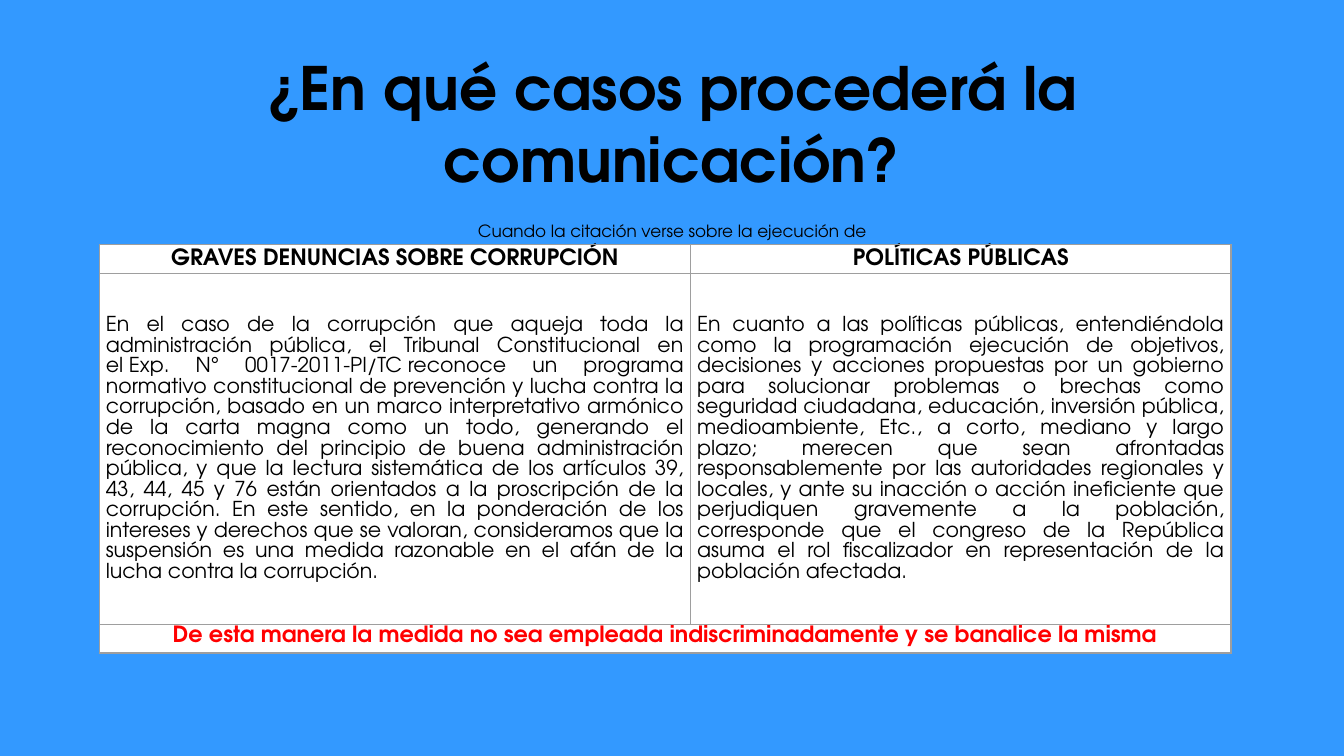
from dataclasses import dataclass

import pptx
import pptx.dml.color
import pptx.enum.text
import pptx.oxml
import pptx.oxml.ns
import pptx.util
from pptx.util import Inches

ALIGN = pptx.enum.text.PP_ALIGN
ANCHOR = pptx.enum.text.MSO_ANCHOR
FONT = "TeX Gyre Adventor"
HARD_SPACE = chr(160)
COLORS = {
    "background": "3399FF",
    "text": "000000",
    "warning": "FF0000",
    "cell": "FFFFFF",
    "border": "9E9E9E",
}


@dataclass
class Style:
    size: float
    bold: bool = False
    color: str = "text"
    align: ALIGN = ALIGN.CENTER
    line_spacing: float | None = None
    gap: float | None = None
    anchor: ANCHOR = ANCHOR.MIDDLE


@dataclass
class Entry:
    row: int
    column: int
    text: str
    style: Style


TITLE = Style(32, bold=True)
SUBTITLE = Style(9, line_spacing=1.5, gap=12, anchor=ANCHOR.TOP)
HEADING = Style(12, bold=True, line_spacing=1.07, gap=12)
BODY = Style(11, align=ALIGN.JUSTIFY, line_spacing=1.07, gap=12)
WARNING = Style(12, bold=True, color="warning", line_spacing=1.07, gap=12, anchor=ANCHOR.TOP)

COLUMN_WIDTHS = [4.4, 4.02]
ROW_HEIGHTS = [0.21, 2.61, 0.21]
ENTRIES = [
    Entry(0, 0, "GRAVES DENUNCIAS SOBRE CORRUPCIÓN", HEADING),
    Entry(0, 1, "POLÍTICAS PÚBLICAS", HEADING),
    Entry(
        1, 0,
        "En el caso de la corrupción que aqueja toda la administración pública, "
        f"el Tribunal Constitucional en el{HARD_SPACE}Exp. N° 0017-2011-PI/TC{HARD_SPACE}"
        "reconoce un programa "
        "normativo constitucional de prevención y lucha contra la corrupción, basado en "
        "un marco interpretativo armónico de la carta magna como un todo, generando el "
        "reconocimiento del principio de buena administración pública, y que la lectura "
        "sistemática de los artículos 39, 43, 44, 45 y 76 están orientados a la "
        "proscripción de la corrupción. En este sentido, en la ponderación de los "
        "intereses y derechos que se valoran, consideramos que la suspensión es una "
        "medida razonable en el afán de la lucha contra la corrupción.",
        BODY,
    ),
    Entry(
        1, 1,
        "En cuanto a las políticas públicas, entendiéndola como la programación "
        "ejecución de objetivos, decisiones y acciones propuestas por un gobierno para "
        "solucionar problemas o brechas como seguridad ciudadana, educación, inversión "
        "pública, medioambiente, Etc., a corto, mediano y largo plazo; merecen que sean "
        "afrontadas responsablemente por las autoridades regionales y locales, y ante su "
        "inacción o acción ineficiente que perjudiquen gravemente a la población, "
        "corresponde que el congreso de la República asuma el rol fiscalizador en "
        "representación de la población afectada.",
        BODY,
    ),
    Entry(
        2, 0,
        "De esta manera la medida no sea empleada indiscriminadamente y se banalice la misma",
        WARNING,
    ),
]


def rgb(name: str) -> pptx.dml.color.RGBColor:
    return pptx.dml.color.RGBColor.from_string(COLORS[name])


def write(frame: pptx.text.text.TextFrame, text: str, style: Style) -> None:
    frame.text = text
    paragraph = frame.paragraphs[0]
    paragraph.alignment = style.align
    paragraph.line_spacing = style.line_spacing
    if style.gap is not None:
        paragraph.space_before = paragraph.space_after = pptx.util.Pt(style.gap)
    font = paragraph.runs[0].font
    font.name = FONT
    font.size = pptx.util.Pt(style.size)
    font.bold = style.bold
    font.color.rgb = rgb(style.color)


def add_text(
    slide: pptx.slide.Slide, left: float, top: float, width: float, height: float,
    text: str, style: Style,
) -> pptx.text.text.TextFrame:
    box = slide.shapes.add_textbox(Inches(left), Inches(top), Inches(width), Inches(height))
    frame = box.text_frame
    frame.word_wrap = True
    frame.vertical_anchor = style.anchor
    write(frame, text, style)
    return frame


def dress_cell(cell: pptx.table._Cell) -> None:
    properties = cell._tc.get_or_add_tcPr()
    for side in ("lnL", "lnR", "lnT", "lnB"):
        properties.append(pptx.oxml.parse_xml(
            f'<a:{side} {pptx.oxml.ns.nsdecls("a")} w="{pptx.util.Pt(0.75)}">'
            f'<a:solidFill><a:srgbClr val="{COLORS["border"]}"/></a:solidFill></a:{side}>'
        ))
    cell.fill.solid()
    cell.fill.fore_color.rgb = rgb("cell")
    cell.margin_left = cell.margin_right = pptx.util.Pt(3.4)
    cell.margin_top = cell.margin_bottom = 0


def add_cases(slide: pptx.slide.Slide) -> None:
    cases = slide.shapes.add_table(
        len(ROW_HEIGHTS), len(COLUMN_WIDTHS), Inches(0.74), Inches(1.82),
        Inches(sum(COLUMN_WIDTHS)), Inches(sum(ROW_HEIGHTS)),
    ).table
    cases.first_row = cases.horz_banding = False
    for column, width in zip(cases.columns, COLUMN_WIDTHS):
        column.width = Inches(width)
    for row, height in zip(cases.rows, ROW_HEIGHTS):
        row.height = Inches(height)
    cases.cell(2, 0).merge(cases.cell(2, 1))
    for cell in cases.iter_cells():
        dress_cell(cell)
    for entry in ENTRIES:
        cell = cases.cell(entry.row, entry.column)
        cell.vertical_anchor = entry.style.anchor
        write(cell.text_frame, entry.text, entry.style)


def main() -> None:
    presentation = pptx.Presentation()
    presentation.slide_width = Inches(10)
    presentation.slide_height = Inches(10 * 9 / 16)
    slide = presentation.slides.add_slide(presentation.slide_layouts[6])
    slide.background.fill.solid()
    slide.background.fill.fore_color.rgb = rgb("background")

    title = add_text(
        slide, 0.44, 0.45, 9.12, 0.92, "¿En qué casos procederá la comunicación?", TITLE
    )
    title.margin_top = title.margin_bottom = Inches(0.1)
    subtitle = add_text(
        slide, 3, 1.52, 4, 0.3, "Cuando la citación verse sobre la ejecución de", SUBTITLE
    )
    subtitle.auto_size = pptx.enum.text.MSO_AUTO_SIZE.SHAPE_TO_FIT_TEXT
    add_cases(slide)
    presentation.save("out.pptx")


if __name__ == "__main__":
    main()
